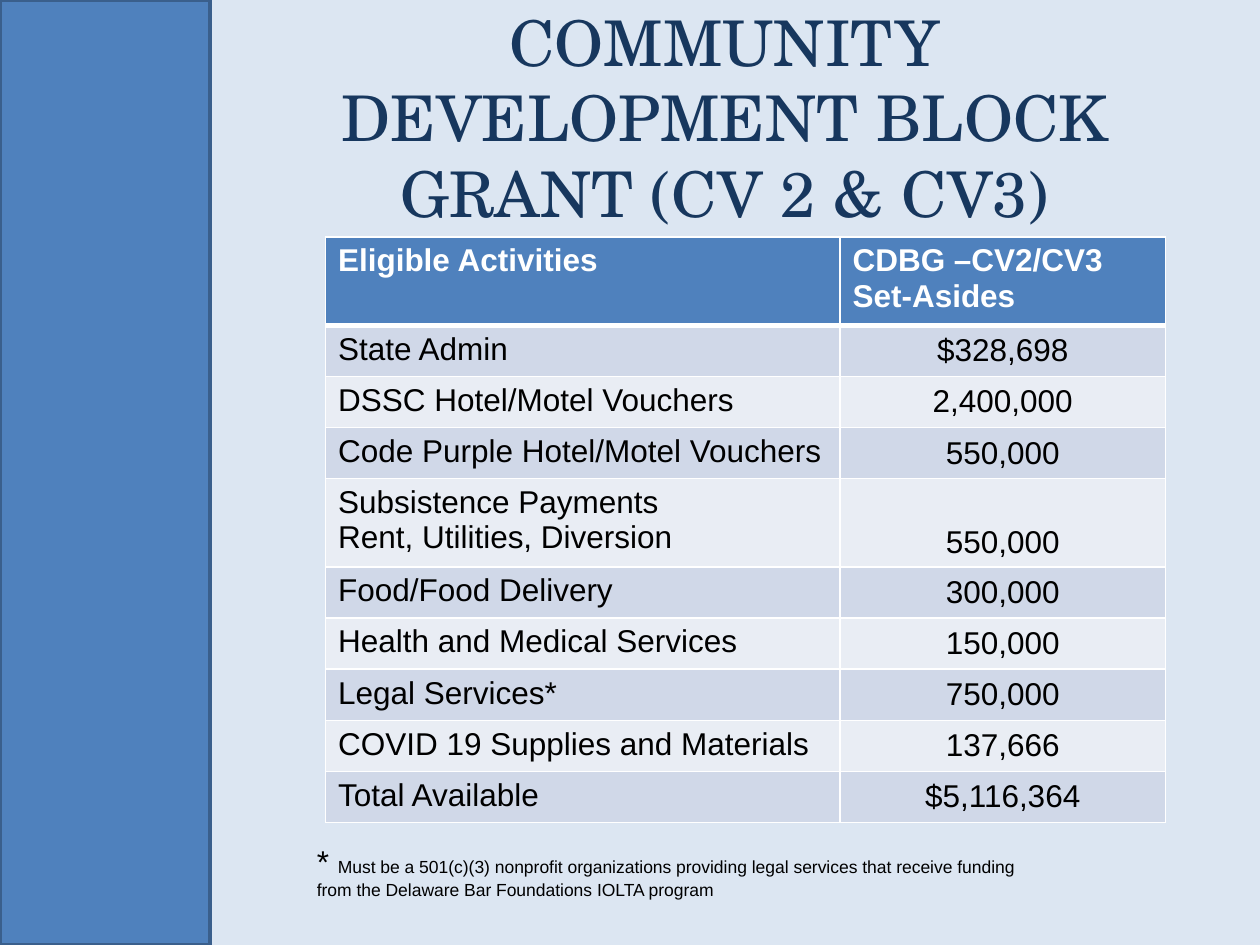
import pptx
import pptx.util
import pptx.dml.color
import pptx.enum.shapes
import pptx.enum.text
import pptx.oxml
import pptx.oxml.ns

Pt = pptx.util.Pt
ALIGN = pptx.enum.text.PP_ALIGN
ANCHOR = pptx.enum.text.MSO_ANCHOR
HUES = {
    "back": "DCE6F2", "blue": "4F81BD", "edge": "3A5F8C", "navy": "17375E",
    "white": "FFFFFF", "black": "000000", "dark": "D0D8E8", "light": "E9EDF4",
}
ROWS = [
    ("Eligible Activities", "CDBG –CV2/CV3 Set-Asides"),
    ("State Admin", "$328,698"),
    ("DSSC Hotel/Motel Vouchers", "2,400,000"),
    ("Code Purple Hotel/Motel Vouchers", "550,000"),
    ("Subsistence Payments\nRent, Utilities, Diversion", "550,000"),
    ("Food/Food Delivery", "300,000"),
    ("Health and Medical Services", "150,000"),
    ("Legal Services*", "750,000"),
    ("COVID 19 Supplies and Materials", "137,666"),
    ("Total Available", "$5,116,364"),
]
COLS = (294, 186)
HEAD, ROW, TALL = 47.4, 29.25, 49.2
NOTE = ("Must be a 501(c)(3) nonprofit organizations providing legal services "
        "that receive funding from the Delaware Bar Foundations IOLTA program")


def color(name):
    return pptx.dml.color.RGBColor.from_string(HUES[name])


def paint(fill, name):
    fill.solid()
    fill.fore_color.rgb = color(name)


def add_run(para, text, size=18, face="Arial", hue="black", bold=False):
    run = para.add_run()
    run.text = text
    font = run.font
    font.size, font.name, font.bold = Pt(size), face, bold
    font.color.rgb = color(hue)


def write(frame, text, align=ALIGN.LEFT, **style):
    """Fill a text frame, one paragraph per line of text."""
    for i, line in enumerate(text.split("\n")):
        para = frame.add_paragraph() if i else frame.paragraphs[0]
        para.alignment = align
        add_run(para, line, **style)


def border(cell, **widths):
    """Rule the cell's L, R, T and B sides in white, 1 pt unless given."""
    props = cell._tc.get_or_add_tcPr()
    for i, side in enumerate("LRTB"):
        width = Pt(widths.get(side, 1))
        props.insert(i, pptx.oxml.parse_xml(
            f'<a:ln{side} {pptx.oxml.ns.nsdecls("a")} w="{width}"><a:solidFill>'
            f'<a:srgbClr val="{HUES["white"]}"/></a:solidFill></a:ln{side}>'))


class Deck:
    def __init__(self):
        self.show = pptx.Presentation()
        self.show.slide_width, self.show.slide_height = Pt(720), Pt(540)
        self.slide = self.show.slides.add_slide(self.show.slide_layouts[6])
        paint(self.slide.background.fill, "back")

    def panel(self, *box):
        shape = self.slide.shapes.add_shape(
            pptx.enum.shapes.MSO_SHAPE.RECTANGLE, *map(Pt, box))
        shape.shadow.inherit = False
        paint(shape.fill, "blue")
        shape.line.color.rgb = color("edge")
        shape.line.width = Pt(2)

    def label(self, *box, anchor=ANCHOR.TOP):
        frame = self.slide.shapes.add_textbox(*map(Pt, box)).text_frame
        frame.word_wrap = True
        frame.vertical_anchor = anchor
        return frame

    def table(self, left, top, rows, cols):
        tall = [HEAD] + [TALL if "\n" in row[0] else ROW for row in rows[1:]]
        grid = self.slide.shapes.add_table(
            len(rows), len(cols), Pt(left), Pt(top),
            Pt(sum(cols)), Pt(sum(tall))).table
        for col, width in zip(grid.columns, cols):
            col.width = Pt(width)
        for r, row in enumerate(rows):
            grid.rows[r].height = Pt(tall[r])
            for c, text in enumerate(row):
                self.cell(grid.cell(r, c), text, r, c, tall[r] == TALL)

    def cell(self, cell, text, r, c, double):
        value = r > 0 and c > 0
        paint(cell.fill, ("light", "dark")[r % 2] if r else "blue")
        border(cell, T=3 if r == 1 else 1, B=1 if r else 3)
        if value:
            cell.vertical_anchor = ANCHOR.BOTTOM if double else ANCHOR.MIDDLE
        write(cell.text_frame, text, ALIGN.CENTER if value else ALIGN.LEFT,
              hue="black" if r else "white", bold=r == 0)


def main():
    deck = Deck()
    deck.panel(0, 0, 120, 540)
    title = deck.label(144, 21.6, 540, 90, anchor=ANCHOR.MIDDLE)
    write(title, "COMMUNITY DEVELOPMENT BLOCK GRANT (CV 2 & CV3)", ALIGN.CENTER,
          size=36, face="TeX Gyre Schola", hue="navy")
    deck.table(186, 135.4, ROWS, COLS)
    note = deck.label(174, 477.4, 426, 41)
    write(note, "* ")
    add_run(note.paragraphs[0], NOTE, size=10)
    deck.show.save("out.pptx")


if __name__ == "__main__":
    main()
